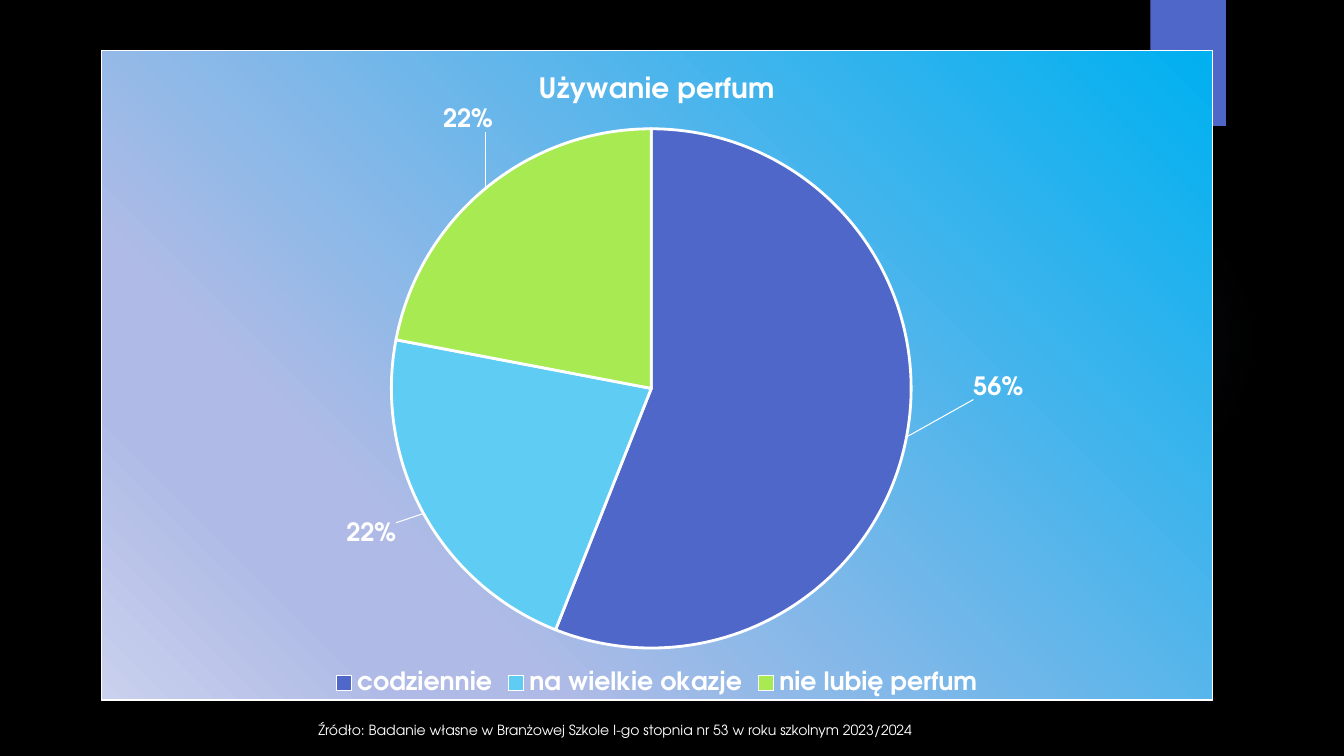
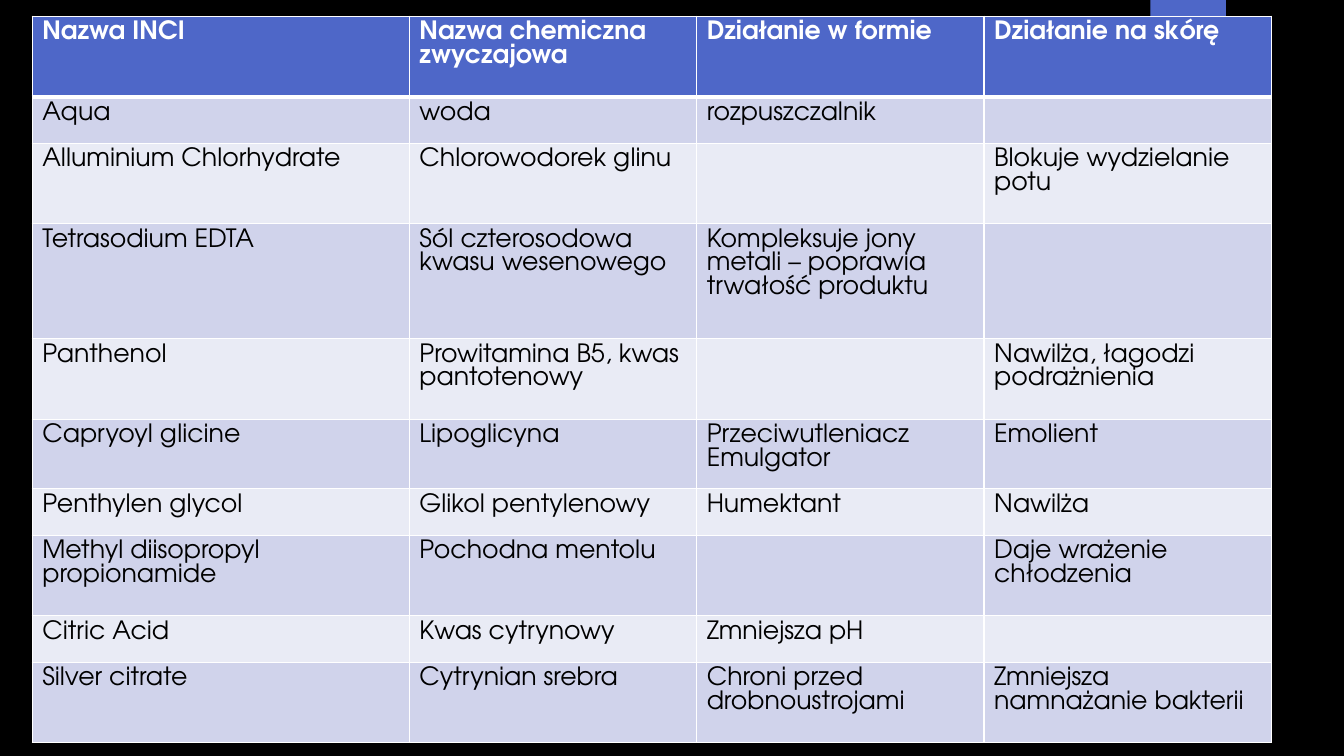
import pptx
import pptx.chart.data
import pptx.dml.color
import pptx.enum.chart
import pptx.enum.shapes
import pptx.oxml
import pptx.oxml.ns
import pptx.util

Inches, Pt = pptx.util.Inches, pptx.util.Pt
RGBColor = pptx.dml.color.RGBColor

# Shared look
FONT = "TeX Gyre Adventor"
BLACK = RGBColor(0x00, 0x00, 0x00)
WHITE = RGBColor(0xFF, 0xFF, 0xFF)
INDIGO = RGBColor(0x4E, 0x67, 0xC8)
SKY = RGBColor(0x5E, 0xCC, 0xF3)
LIME = RGBColor(0xA7, 0xEA, 0x52)
GLOW = RGBColor(0x59, 0x68, 0xB0)
ROW_DARK = RGBColor(0xD0, 0xD3, 0xEB)
ROW_LIGHT = RGBColor(0xE9, 0xEB, 0xF5)
PANEL_STOPS = [
    (0, RGBColor(0x00, 0xB0, 0xF0), 100),
    (74, RGBColor(0xAF, 0xBB, 0xE6), 100),
    (83, RGBColor(0xAF, 0xBB, 0xE6), 100),
    (100, RGBColor(0xCA, 0xD1, 0xEE), 100),
]
GLOW_STOPS = [(0, GLOW, 7), (36, GLOW, 6), (69, GLOW, 0)]

# Content: perfume survey
SURVEY_TITLE = "Używanie perfum"
SURVEY = [  # answer, share, colour, label shift as a fraction of the chart
    ("codziennie", 0.56, INDIGO, (0.055, -0.095)),
    ("na wielkie okazje", 0.22, SKY, (-0.02, 0.01)),
    ("nie lubię perfum", 0.22, LIME, (0.01, -0.08)),
]
PIE_AREA = {"x": 0.26, "y": 0.12, "w": 0.47, "h": 0.8}
SURVEY_SOURCE = ("Źródło: Badanie własne w Branżowej Szkole I-go stopnia nr 53 "
                 "w roku szkolnym 2023/2024")

# Content: ingredients
COLUMN_WIDTHS = [3.74, 2.85, 2.85, 2.85]
INGREDIENTS = [  # row height, cells
    (0.8, ("Nazwa INCI", "Nazwa chemiczna zwyczajowa",
           "Działanie w formie", "Działanie na skórę")),
    (0.46, ("Aqua", "woda", "rozpuszczalnik", "")),
    (0.8, ("Alluminium Chlorhydrate", "Chlorowodorek glinu", "",
           "Blokuje wydzielanie potu")),
    (1.14, ("Tetrasodium EDTA", "Sól czterosodowa kwasu wesenowego",
            "Kompleksuje jony metali – poprawia trwałość produktu", "")),
    (0.8, ("Panthenol", "Prowitamina B5, kwas pantotenowy", "",
           "Nawilża, łagodzi podrażnienia")),
    (0.69, ("Capryoyl glicine", "Lipoglicyna", "Przeciwutleniacz Emulgator",
            "Emolient")),
    (0.46, ("Penthylen glycol", "Glikol pentylenowy", "Humektant", "Nawilża")),
    (0.8, ("Methyl diisopropyl propionamide", "Pochodna mentolu", "",
           "Daje wrażenie chłodzenia")),
    (0.46, ("Citric Acid", "Kwas cytrynowy", "Zmniejsza pH", "")),
    (0.8, ("Silver citrate", "Cytrynian srebra", "Chroni przed drobnoustrojami",
           "Zmniejsza namnażanie bakterii")),
]


def xml(text):
    """Parse markup whose root carries the a: and c: namespaces."""
    head, rest = text.split(">", 1)
    slash = "/" if head.endswith("/") else ""
    namespaces = pptx.oxml.ns.nsdecls("a", "c")
    return pptx.oxml.parse_xml(f"{head.rstrip('/')} {namespaces}{slash}>{rest}")


def gradient(stops, direction):
    marks = "".join(
        f'<a:gs pos="{pos * 1000}"><a:srgbClr val="{color}">'
        f'<a:alpha val="{alpha * 1000}"/></a:srgbClr></a:gs>'
        for pos, color, alpha in stops)
    return f'<a:gradFill rotWithShape="1"><a:gsLst>{marks}</a:gsLst>{direction}</a:gradFill>'


def line(tag, points):
    return (f'<{tag} w="{Pt(points)}"><a:solidFill><a:srgbClr val="{WHITE}"/>'
            f'</a:solidFill></{tag}>')


def style(font, size, color=WHITE, bold=False):
    font.name, font.size, font.bold = FONT, Pt(size), bold
    font.color.rgb = color


def add_run(paragraph, text, *look):
    run = paragraph.add_run()
    run.text = text
    style(run.font, *look)


def add_themed_slide(prs):
    slide = prs.slides.add_slide(prs.slide_layouts[6])
    shapes = pptx.enum.shapes.MSO_SHAPE
    glow = slide.shapes.add_shape(
        shapes.OVAL, Inches(9.41), Inches(1.83), Inches(3.08), Inches(3.08))
    band = slide.shapes.add_shape(
        shapes.RECTANGLE, Inches(11.41), 0, Inches(0.75), Inches(1.25))
    for shape in (glow, band):
        shape.shadow.inherit = False
        shape.line.fill.background()
    band.fill.solid()
    band.fill.fore_color.rgb = INDIGO
    center = ('<a:path path="circle"><a:fillToRect l="50000" t="50000" '
              'r="50000" b="50000"/></a:path>')
    geometry = glow.element.spPr.find(pptx.oxml.ns.qn("a:prstGeom"))
    geometry.addnext(xml(gradient(GLOW_STOPS, center)))
    return slide


def add_survey(slide):
    answers, shares, colors, shifts = zip(*SURVEY)
    data = pptx.chart.data.CategoryChartData(number_format="0%")
    data.categories = answers
    data.add_series("Series 1", shares)
    chart = slide.shapes.add_chart(
        pptx.enum.chart.XL_CHART_TYPE.PIE, Inches(1), Inches(0.5),
        Inches(11.03), Inches(6.45), data).chart
    style(chart.font, 10)

    # Title and legend
    chart.has_title = True
    add_run(chart.chart_title.text_frame.paragraphs[0], SURVEY_TITLE, 20, WHITE, True)
    chart.chart_title.include_in_layout = False
    chart.has_legend = True
    chart.legend.position = pptx.enum.chart.XL_LEGEND_POSITION.BOTTOM
    chart.legend.include_in_layout = False
    style(chart.legend.font, 18, WHITE, True)

    # Panel behind the pie
    panel = gradient(PANEL_STOPS, '<a:lin ang="8100000" scaled="0"/>')
    root = chart.element
    root.find(pptx.oxml.ns.qn("c:chart")).addnext(
        xml(f"<c:spPr>{panel}{line('a:ln', 0.75)}</c:spPr>"))

    # Pie area
    plot_area = root.find(".//" + pptx.oxml.ns.qn("c:plotArea"))
    for old in plot_area.findall(pptx.oxml.ns.qn("c:layout")):
        plot_area.remove(old)
    modes = "".join(f'<c:{side}Mode val="edge"/>' for side in "xy")
    sizes = "".join(f'<c:{side} val="{value}"/>' for side, value in PIE_AREA.items())
    plot_area.insert(0, xml(
        '<c:layout><c:manualLayout><c:layoutTarget val="inner"/>'
        f"{modes}{sizes}</c:manualLayout></c:layout>"))

    # Slices and their labels
    plot = chart.plots[0]
    plot.vary_by_categories = True
    series = plot.series[0]
    labels = series.data_labels
    labels.show_value = True
    labels.number_format, labels.number_format_is_linked = "0%", False
    outside = pptx.enum.chart.XL_LABEL_POSITION.OUTSIDE_END
    labels.position = outside
    style(labels.font, 18, WHITE, True)
    for index, (color, (dx, dy)) in enumerate(zip(colors, shifts)):
        point = series.points[index]
        point.format.fill.solid()
        point.format.fill.fore_color.rgb = color
        point.format.line.color.rgb = WHITE
        point.format.line.width = Pt(2)
        label = point.data_label
        label.position = outside
        style(label.font, 18, WHITE, True)
        mark = labels._element.findall(pptx.oxml.ns.qn("c:dLbl"))[index]
        mark.find(pptx.oxml.ns.qn("c:idx")).addnext(xml(
            f'<c:layout><c:manualLayout><c:x val="{dx}"/><c:y val="{dy}"/>'
            "</c:manualLayout></c:layout>"))
    for old in labels._element.findall(pptx.oxml.ns.qn("c:showLeaderLines")):
        labels._element.remove(old)
    labels._element.append(xml('<c:showLeaderLines val="1"/>'))
    labels._element.append(xml(
        f"<c:leaderLines><c:spPr>{line('a:ln', 0.75)}</c:spPr></c:leaderLines>"))


def add_source(slide):
    frame = slide.shapes.add_textbox(
        Inches(3.06), Inches(7.11), Inches(6.65), Inches(0.27)).text_frame
    frame.word_wrap = True
    add_run(frame.paragraphs[0], SURVEY_SOURCE, 10)


def add_ingredients(slide):
    heights = [height for height, _ in INGREDIENTS]
    table = slide.shapes.add_table(
        len(heights), len(COLUMN_WIDTHS), Inches(0.32), Inches(0.16),
        Inches(sum(COLUMN_WIDTHS)), Inches(sum(heights))).table
    for column, width in zip(table.columns, COLUMN_WIDTHS):
        column.width = Inches(width)
    for row_index, (height, texts) in enumerate(INGREDIENTS):
        table.rows[row_index].height = Inches(height)
        header = row_index == 0
        fill = INDIGO if header else (ROW_LIGHT, ROW_DARK)[row_index % 2]
        borders = {"L": 1, "R": 1, "T": 3 if row_index == 1 else 1,
                   "B": 3 if header else 1}
        for cell, text in zip(table.rows[row_index].cells, texts):
            cell.fill.solid()
            cell.fill.fore_color.rgb = fill
            properties = cell._tc.get_or_add_tcPr()
            for order, (side, points) in enumerate(borders.items()):
                properties.insert(order, xml(line(f"a:ln{side}", points)))
            if text:
                paragraph = cell.text_frame.paragraphs[0]
                paragraph.line_spacing = Pt(16.8)
                add_run(paragraph, text, 18, WHITE if header else BLACK, header)


def main():
    prs = pptx.Presentation()
    prs.slide_width, prs.slide_height = Inches(13.33), Inches(7.5)
    background = prs.slide_master.background.fill
    background.solid()
    background.fore_color.rgb = BLACK

    survey_slide = add_themed_slide(prs)
    add_survey(survey_slide)
    add_source(survey_slide)
    add_ingredients(add_themed_slide(prs))
    prs.save("out.pptx")


if __name__ == "__main__":
    main()
